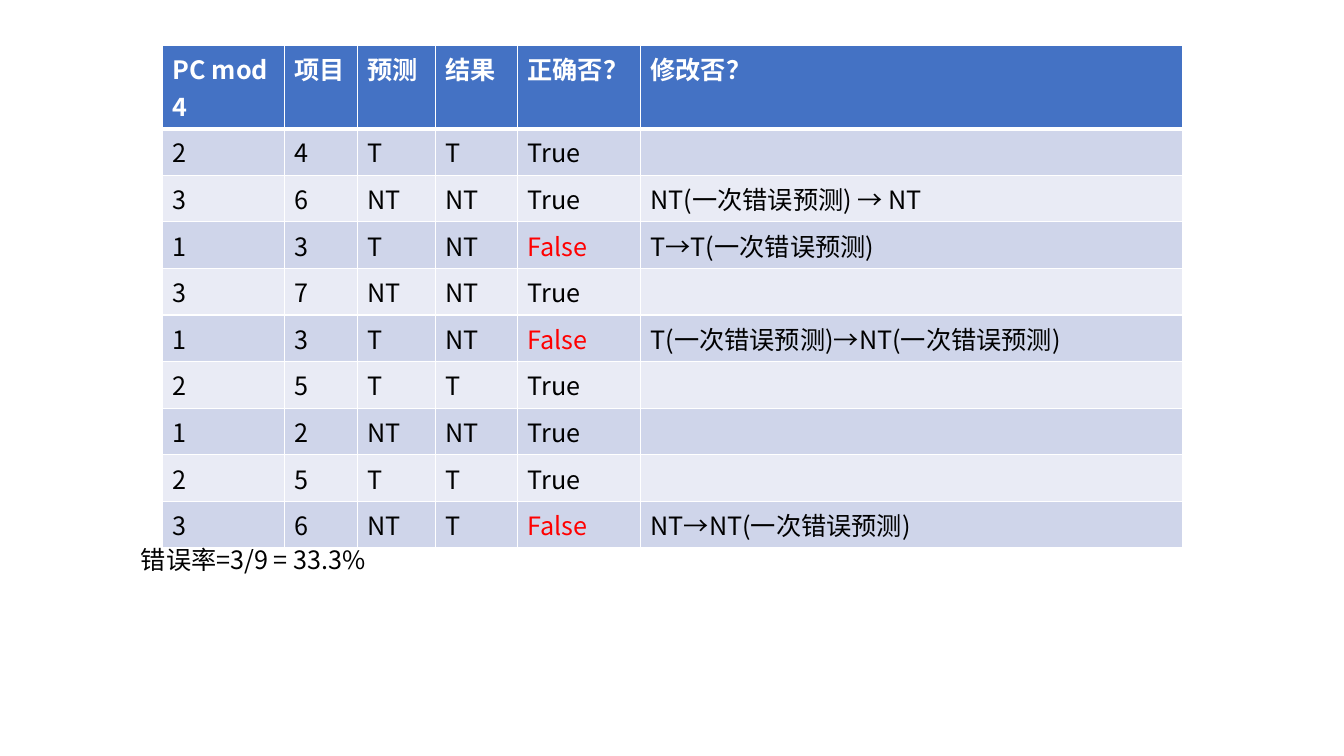
from dataclasses import dataclass

from lxml import etree
from pptx import Presentation
from pptx.dml.color import RGBColor
from pptx.enum.text import MSO_AUTO_SIZE
from pptx.oxml.ns import qn
from pptx.util import Cm, Pt

GROW_TO_TEXT = MSO_AUTO_SIZE.SHAPE_TO_FIT_TEXT


@dataclass(frozen=True)
class Theme:
    font: str = "Noto Sans CJK SC"
    text_size: int = 18
    text: str = "000000"
    wrong: str = "FF0000"
    header_text: str = "FFFFFF"
    header_fill: str = "4472C4"
    bands: tuple = ("CFD5EA", "E9EBF5")
    border: str = "FFFFFF"
    thin: int = 1
    thick: int = 3


THEME = Theme()

HEADINGS = ("PC mod 4", "项目", "预测", "结果", "正确否？", "修改否？")
PREDICTIONS = (
    ("2", "4", "T", "T", "True", ""),
    ("3", "6", "NT", "NT", "True", "NT(一次错误预测) → NT"),
    ("1", "3", "T", "NT", "False", "T→T(一次错误预测)"),
    ("3", "7", "NT", "NT", "True", ""),
    ("1", "3", "T", "NT", "False", "T(一次错误预测)→NT(一次错误预测)"),
    ("2", "5", "T", "T", "True", ""),
    ("1", "2", "NT", "NT", "True", ""),
    ("2", "5", "T", "T", "True", ""),
    ("3", "6", "NT", "T", "False", "NT→NT(一次错误预测)"),
)
COLUMN_WIDTHS = (3.07, 1.83, 1.98, 2.06, 3.1, 13.67)
ROW_HEIGHT = 1.03


def write(frame, text, color, bold=False):
    span = frame.paragraphs[0].add_run()
    span.text = text
    formats = {"name": THEME.font, "size": Pt(THEME.text_size), "bold": bold}
    for name, value in formats.items():
        setattr(span.font, name, value)
    span.font.color.rgb = RGBColor.from_string(color)
    east_asian = etree.SubElement(span.font._element, qn("a:ea"))
    east_asian.set("typeface", THEME.font)


def set_borders(cell, top, bottom):
    """Outline a cell; must run before its fill is set, as lines precede fills."""
    properties = cell._tc.get_or_add_tcPr()
    widths = {"a:lnL": THEME.thin, "a:lnR": THEME.thin, "a:lnT": top, "a:lnB": bottom}
    for tag, width in widths.items():
        line = etree.SubElement(properties, qn(tag), w=str(Pt(width)))
        fill = etree.SubElement(line, qn("a:solidFill"))
        etree.SubElement(fill, qn("a:srgbClr"), val=THEME.border)


def add_prediction_table(page, left, top):
    rows = (HEADINGS, *PREDICTIONS)
    table = page.shapes.add_table(
        len(rows), len(HEADINGS), Cm(left), Cm(top),
        Cm(sum(COLUMN_WIDTHS)), Cm(ROW_HEIGHT * len(rows)),
    ).table
    for column, width in zip(table.columns, COLUMN_WIDTHS):
        column.width = Cm(width)
    for row_index, row in enumerate(rows):
        is_header = row_index == 0
        band = THEME.bands[(row_index - 1) % 2]
        for column_index, text in enumerate(row):
            cell = table.cell(row_index, column_index)
            set_borders(
                cell,
                top=THEME.thick if row_index == 1 else THEME.thin,
                bottom=THEME.thick if is_header else THEME.thin,
            )
            cell.fill.solid()
            cell.fill.fore_color.rgb = RGBColor.from_string(
                THEME.header_fill if is_header else band
            )
            if is_header:
                write(cell.text_frame, text, THEME.header_text, bold=True)
            elif text:
                color = THEME.wrong if text == "False" else THEME.text
                write(cell.text_frame, text, color)


def add_error_rate(page, left, top, width, height):
    box = page.shapes.add_textbox(Cm(left), Cm(top), Cm(width), Cm(height))
    box.text_frame.word_wrap = True
    box.text_frame.auto_size = GROW_TO_TEXT
    write(box.text_frame, "错误率=3/9 = 33.3%", THEME.text)


def main():
    deck = Presentation()
    deck.slide_width, deck.slide_height = Cm(33.87), Cm(19.05)
    page = deck.slides.add_slide(deck.slide_layouts[6])
    add_prediction_table(page, left=4.1, top=1.15)
    add_error_rate(page, left=3.3, top=13.59, width=18.95, height=1.03)
    deck.save("out.pptx")


if __name__ == "__main__":
    main()
